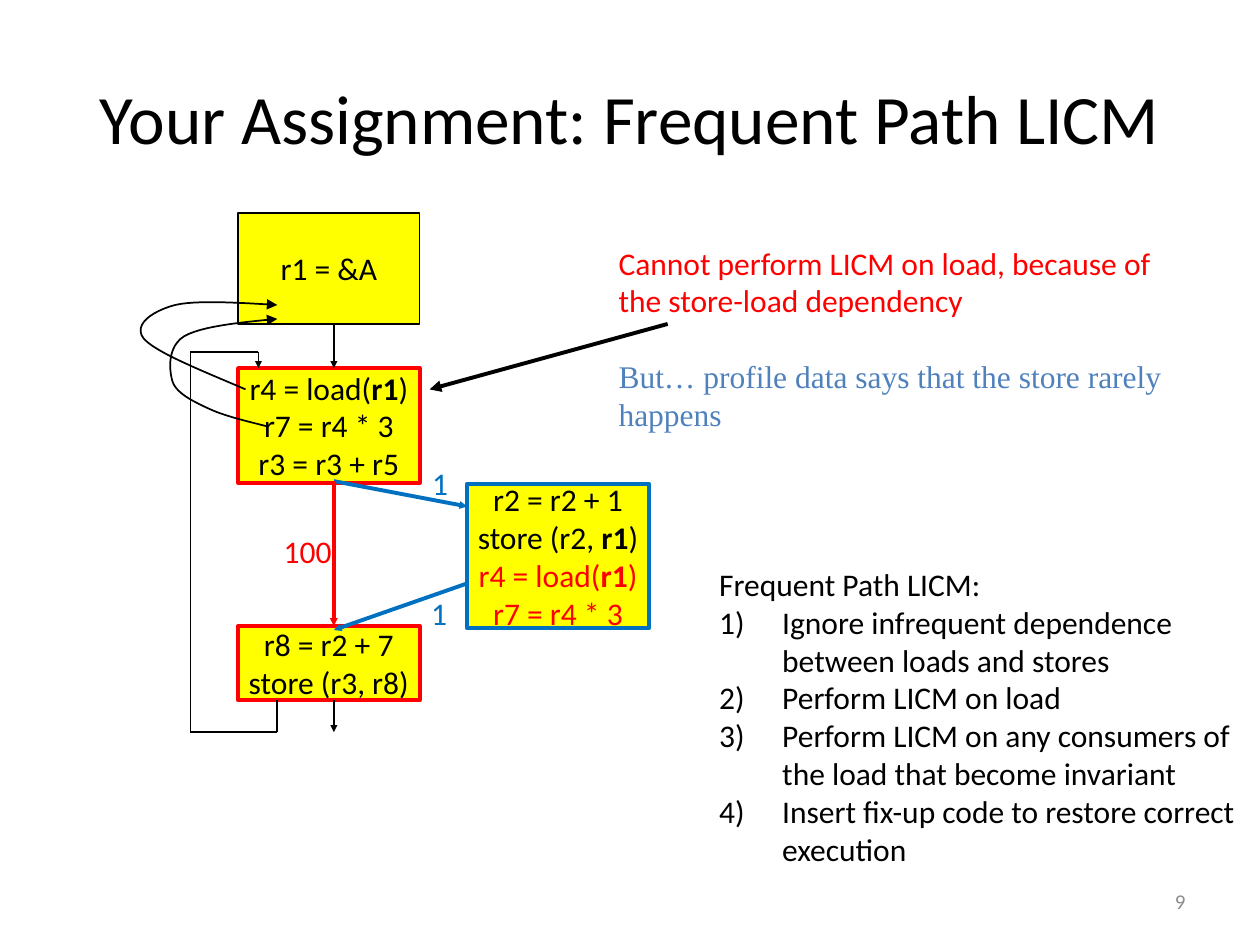
from dataclasses import dataclass
from itertools import pairwise

from lxml.etree import SubElement
from pptx import Presentation
from pptx.dml.color import RGBColor
from pptx.enum.shapes import MSO_CONNECTOR as Connector, MSO_SHAPE as Shape
from pptx.enum.text import MSO_ANCHOR as Anchor, PP_ALIGN as Align
from pptx.oxml.ns import qn
from pptx.util import Cm, Pt

COLORS = {
    "black": "000000", "red": "FF0000", "blue": "0070C0",
    "soft_blue": "4F81BD", "yellow": "FFFF00", "gray": "8C8C8C",
}
Point = tuple[float, float]


@dataclass
class Line:
    """One paragraph; parts between bars are bold."""
    text: str
    color: str = "black"
    numbered: bool = False


@dataclass
class Block:
    place: tuple[float, float, float, float]
    border: str
    width: float
    lines: list[Line]


@dataclass
class Note:
    place: tuple[float, float, float, float]
    lines: list[Line]
    wrap: bool = True
    font: str = "Calibri"
    size: float = 18
    align: Align = Align.LEFT
    anchor: Anchor = Anchor.TOP
    indent: float = 0


@dataclass
class Edge:
    start: Point
    end: Point
    color: str = "black"
    width: float = 1
    arrow: str = "sm"


def rgb(name: str) -> RGBColor:
    return RGBColor.from_string(COLORS[name])


def apply(target, values: dict) -> None:
    for name, value in values.items():
        setattr(target, name, value)


def write(frame, lines: list[Line], font="Calibri", size=18.0,
          align=Align.CENTER, anchor=Anchor.MIDDLE, wrap=False, indent=0.0) -> None:
    apply(frame, {
        "word_wrap": wrap, "vertical_anchor": anchor,
        "margin_left": Cm(0.23), "margin_right": Cm(0.23),
        "margin_top": Cm(0.11), "margin_bottom": Cm(0.11),
    })
    for index, line in enumerate(lines):
        paragraph = frame.add_paragraph() if index else frame.paragraphs[0]
        paragraph.alignment = align
        properties = paragraph._p.get_or_add_pPr()
        if indent:
            properties.set("marL", str(Cm(indent)))
            properties.set("indent", str(-Cm(indent)))
        if line.numbered:
            SubElement(properties, qn("a:buAutoNum"), type="arabicParenR")
        for position, part in enumerate(line.text.split("|")):
            run = paragraph.add_run()
            run.text = part
            apply(run.font, {"name": font, "size": Pt(size), "bold": position % 2 == 1})
            run.font.color.rgb = rgb(line.color)


def style_line(shape, color: str, width: float, arrow: str = "") -> None:
    shape.line.color.rgb = rgb(color)
    shape.line.width = Pt(width)
    if arrow:
        SubElement(shape.line._get_or_add_ln(), qn("a:tailEnd"),
                   type="triangle", w=arrow, len=arrow)


def add_block(slide, block: Block) -> None:
    shape = slide.shapes.add_shape(Shape.RECTANGLE, *map(Cm, block.place))
    shape.shadow.inherit = False
    shape.fill.solid()
    shape.fill.fore_color.rgb = rgb("yellow")
    style_line(shape, block.border, block.width)
    write(shape.text_frame, block.lines)


def add_note(slide, note: Note) -> None:
    box = slide.shapes.add_textbox(*map(Cm, note.place))
    write(box.text_frame, note.lines, note.font, note.size,
          note.align, note.anchor, note.wrap, note.indent)


def add_edge(slide, edge: Edge) -> None:
    connector = slide.shapes.add_connector(
        Connector.STRAIGHT, *map(Cm, edge.start + edge.end))
    style_line(connector, edge.color, edge.width, edge.arrow)
    SubElement(connector._element.spPr, qn("a:effectLst"))


def add_curve(slide, points: list[Point], steps: int = 12) -> None:
    """Draw joined cubic Bezier segments, each sampled in equal steps."""
    builder = slide.shapes.build_freeform(*map(Cm, points[0]))
    vertices = []
    for first in range(0, len(points) - 1, 3):
        segment = points[first:first + 4]
        for step in range(1, steps + 1):
            t = step / steps
            weights = ((1 - t) ** 3, 3 * t * (1 - t) ** 2, 3 * t * t * (1 - t), t ** 3)
            vertices.append(tuple(
                Cm(sum(w * p[axis] for w, p in zip(weights, segment))) for axis in (0, 1)))
    builder.add_line_segments(vertices, close=False)
    curve = builder.convert_to_shape()
    curve.shadow.inherit = False
    curve.fill.background()
    style_line(curve, "black", 1, "med")


# Basic blocks of the loop
LEFT, WIDTH, CENTER, SIDE = 4.8, 3.66, 6.73, 9.42
BLOCKS = [
    Block((LEFT, 4.29, WIDTH, 2.24), "black", 1, [Line("r1 = &A")]),
    Block((LEFT, 7.42, WIDTH, 2.31), "red", 2.25,
          [Line("r4 = load(|r1|)"), Line("r7 = r4 * 3"), Line("r3 = r3 + r5")]),
    Block((SIDE, 9.75, WIDTH, 2.92), "blue", 2.25,
          [Line("r2 = r2 + 1"), Line("store (r2, |r1|)"),
           Line("r4 = load(|r1|)", "red"), Line("r7 = r4 * 3", "red")]),
    Block((LEFT, 12.62, WIDTH, 1.5), "red", 2.25,
          [Line("r8 = r2 + 7"), Line("store (r3, r8)")]),
]

# Control flow, with the back edge as a chain of straight pieces
BACK_EDGE = [(5.59, 14.12), (5.59, 14.76), (3.84, 14.76),
             (3.84, 7.09), (5.21, 7.09), (5.21, 7.42)]
EDGES = [
    Edge((CENTER, 6.53), (CENTER, 7.42)),
    Edge((CENTER, 9.7), (SIDE, 10.21), "blue", 2.25),
    Edge((SIDE, 11.76), (CENTER, 12.7), "blue", 2.25),
    Edge((CENTER, 14.12), (CENTER, 14.76)),
    Edge((CENTER, 9.7), (CENTER, 12.62), "red", 2.25),
    Edge((13.46, 6.53), (8.66, 7.85), width=2.25, arrow="med"),
] + [Edge(start, end, arrow="sm" if end == BACK_EDGE[-1] else "")
     for start, end in pairwise(BACK_EDGE)]

# Where the hoisted instructions move to
CURVES = [
    [(4.95, 7.85), (4.06, 7.47), (3.15, 7.11), (2.9, 6.83), (2.67, 6.55),
     (3.07, 6.27), (3.53, 6.15), (3.96, 6.05), (4.78, 6.1), (5.59, 6.15)],
    [(5.36, 8.59), (4.93, 8.48), (4.5, 8.38), (4.19, 8.23), (3.86, 8.08),
     (3.56, 7.92), (3.48, 7.7), (3.4, 7.44), (3.38, 6.99), (3.71, 6.78),
     (4.06, 6.58), (4.83, 6.5), (5.59, 6.43)],
]

# Edge counts, remarks, steps and page number
STEPS = [
    "Ignore infrequent dependence between loads and stores",
    "Perform LICM on load",
    "Perform LICM on any consumers of the load that become invariant",
    "Insert fix-up code to restore correct execution",
]
NOTES = [
    Note((5.49, 10.62, 1.5, 1.02), [Line("100", "red")], wrap=False),
    Note((8.48, 9.25, 0.84, 1.02), [Line("1", "blue")], wrap=False),
    Note((8.46, 11.86, 0.84, 1.02), [Line("1", "blue")]),
    Note((12.24, 4.8, 11.94, 1.78), [Line(
        "Cannot perform LICM on load, because of the store-load dependency", "red")]),
    Note((12.24, 7.09, 11.56, 1.78), [Line(
        "But… profile data says that the store rarely happens", "soft_blue")],
        font="Times New Roman"),
    Note((14.27, 11.28, 11.13, 7.16),
         [Line("Frequent Path LICM:")] + [Line(step, numbered=True) for step in STEPS],
         indent=1.27),
    Note((18.21, 17.65, 5.92, 1.02), [Line("9", "gray")], size=12,
         align=Align.RIGHT, anchor=Anchor.MIDDLE),
]


def main() -> None:
    presentation = Presentation()
    apply(presentation, {"slide_width": Cm(25.4), "slide_height": Cm(19.05)})
    slide = presentation.slides.add_slide(presentation.slide_layouts[5])

    title = slide.shapes.title
    apply(title, {"left": Cm(1.27), "top": Cm(0.76),
                  "width": Cm(22.86), "height": Cm(3.18)})
    write(title.text_frame, [Line("Your Assignment: Frequent Path LICM")],
          size=39.6, wrap=True)

    for draw, items in ((add_block, BLOCKS), (add_edge, EDGES),
                        (add_curve, CURVES), (add_note, NOTES)):
        for item in items:
            draw(slide, item)
    presentation.save("out.pptx")


if __name__ == "__main__":
    main()
